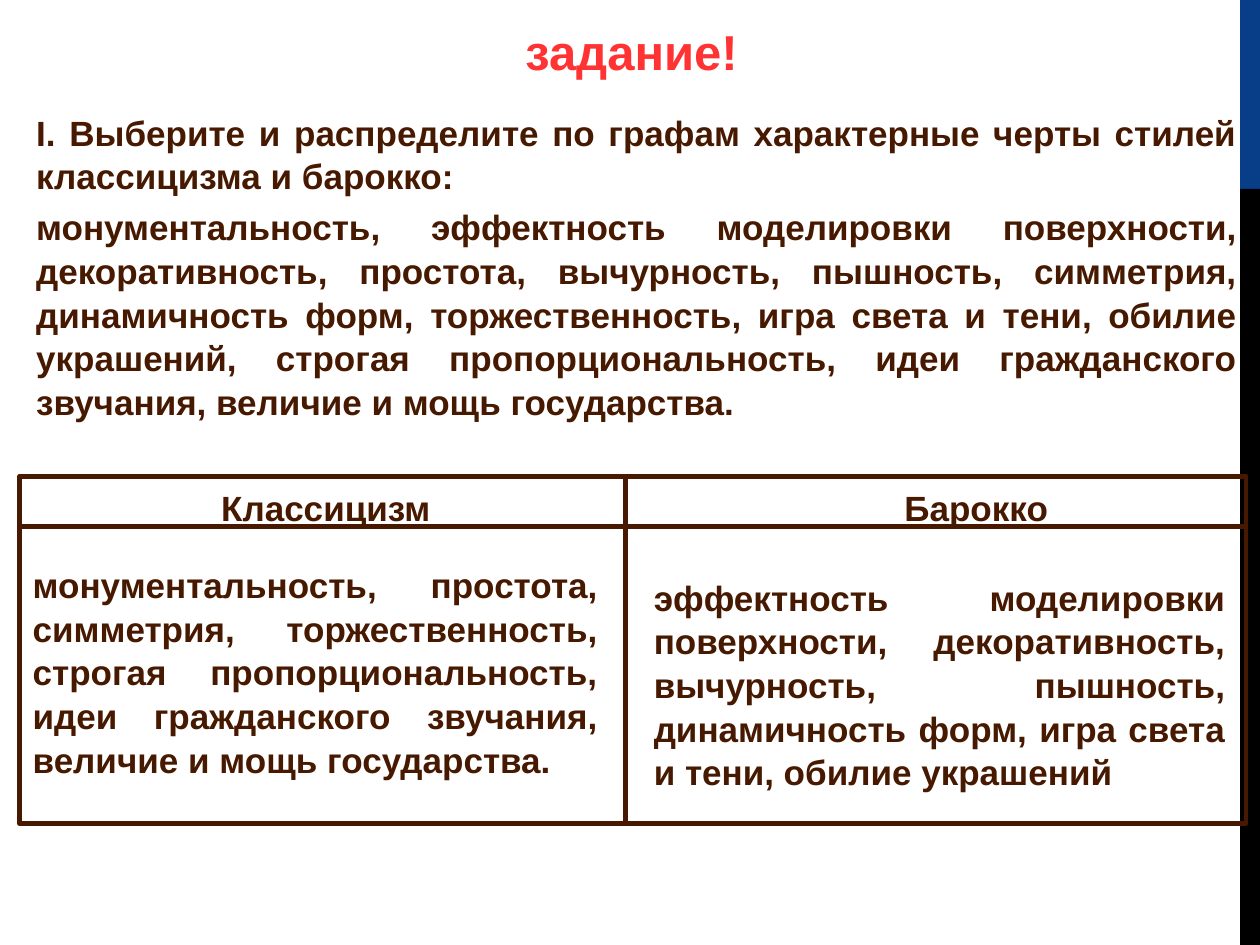
from dataclasses import dataclass

from lxml import etree
from pptx import Presentation
from pptx.dml.color import RGBColor
from pptx.enum.shapes import MSO_CONNECTOR, MSO_SHAPE
from pptx.enum.text import MSO_ANCHOR, PP_ALIGN
from pptx.oxml.ns import qn
from pptx.util import Cm, Pt

RECTANGLE = MSO_SHAPE.RECTANGLE
STRAIGHT = MSO_CONNECTOR.STRAIGHT
LEFT, CENTER, JUSTIFY = PP_ALIGN.LEFT, PP_ALIGN.CENTER, PP_ALIGN.JUSTIFY
TOP, MIDDLE = MSO_ANCHOR.TOP, MSO_ANCHOR.MIDDLE

BROWN, RED, BLUE, BLACK = "461900", "FF3333", "073E87", "000000"
FONT = "Arial"
LINE_WIDTH = Pt(2.83)
WIDE_INSETS = (0.3, 0.18)


@dataclass
class Box:
    left: float
    top: float
    width: float
    height: float

    def lengths(self) -> tuple:
        return Cm(self.left), Cm(self.top), Cm(self.width), Cm(self.height)


@dataclass
class TextBlock:
    box: Box
    paragraphs: list[str]
    insets: tuple[float, float] = (0.25, 0.13)


def color(value: str) -> RGBColor:
    return RGBColor.from_string(value)


def format_text(shape, alignment, size: float, text_color: str, insets=(0.25, 0.13), anchor=TOP) -> None:
    frame = shape.text_frame
    frame.word_wrap = True
    frame.vertical_anchor = anchor
    frame.margin_left = frame.margin_right = Cm(insets[0])
    frame.margin_top = frame.margin_bottom = Cm(insets[1])
    for paragraph in frame.paragraphs:
        paragraph.alignment = alignment
        paragraph.line_spacing = 1.04
        paragraph.space_after = Pt(4.2)
        for run in paragraph.runs:
            run.font.name = FONT
            run.font.size = Pt(size)
            run.font.bold = True
            run.font.color.rgb = color(text_color)


def add_bar(slide, box: Box, fill: str) -> None:
    bar = slide.shapes.add_shape(RECTANGLE, *box.lengths())
    bar.shadow.inherit = False
    bar.fill.solid()
    bar.fill.fore_color.rgb = color(fill)
    bar.line.fill.background()


def add_text(slide, block: TextBlock) -> None:
    shape = slide.shapes.add_textbox(*block.box.lengths())
    shape.text_frame.text = "\n".join(block.paragraphs)
    format_text(shape, JUSTIFY, 20, BROWN, block.insets)


def add_frame(slide, box: Box, headings: dict[str, float]) -> None:
    """Draw the outline; each heading is centred on its tab stop."""
    shape = slide.shapes.add_shape(RECTANGLE, *box.lengths())
    shape.shadow.inherit = False
    shape.fill.background()
    shape.line.color.rgb = color(BROWN)
    shape.line.width = LINE_WIDTH
    paragraph = shape.text_frame.paragraphs[0]
    paragraph.text = "".join(f"\t{heading}" for heading in headings)
    format_text(shape, LEFT, 20, BROWN, WIDE_INSETS)
    tabs = etree.SubElement(paragraph._p.get_or_add_pPr(), qn("a:tabLst"))
    for position in headings.values():
        etree.SubElement(tabs, qn("a:tab"), pos=str(Cm(position)), algn="ctr")


def add_rule(slide, start: tuple[float, float], end: tuple[float, float]) -> None:
    points = [Cm(value) for value in (*start, *end)]
    rule = slide.shapes.add_connector(STRAIGHT, *points)
    rule.line.color.rgb = color(BROWN)
    rule.line.width = LINE_WIDTH
    etree.SubElement(rule._element.spPr, qn("a:effectLst"))


TASK = TextBlock(Box(0.48, 2.08, 24.71, 6.32), [
    "I. Выберите и распределите по графам характерные черты стилей классицизма и барокко:",
    "монументальность, эффектность моделировки поверхности, декоративность, простота, "
    "вычурность, пышность, симметрия, динамичность форм, торжественность, игра света и тени, "
    "обилие украшений, строгая пропорциональность, идеи гражданского звучания, "
    "величие и мощь государства.",
])
ANSWERS = [
    TextBlock(Box(0.41, 11.2, 11.89, 4.5), [
        "монументальность, простота, симметрия, торжественность, строгая пропорциональность, "
        "идеи гражданского звучания, величие и мощь государства.",
    ]),
    TextBlock(Box(12.88, 11.4, 12.12, 4.6), [
        "эффектность моделировки поверхности, декоративность, вычурность, пышность, "
        "динамичность форм, игра света и тени, обилие украшений",
    ], WIDE_INSETS),
]
FRAME = Box(0.4, 9.6, 24.72, 7)
HEADINGS = {"Классицизм": 5.87, "Барокко": 18.98}


def main() -> None:
    presentation = Presentation()
    presentation.slide_width, presentation.slide_height = Cm(25.4), Cm(19.05)
    slide = presentation.slides.add_slide(presentation.slide_layouts[5])

    # Side bars
    add_bar(slide, Box(25, 0, 0.4, 3.81), BLUE)
    add_bar(slide, Box(25, 3.81, 0.4, 15.24), BLACK)

    # Title and task
    title = slide.shapes.title
    title.left, title.top, title.width, title.height = Box(2.8, 0.2, 19.86, 1.6).lengths()
    title.text_frame.text = "задание!"
    format_text(title, CENTER, 28, RED, anchor=MIDDLE)
    title.text_frame.paragraphs[0].space_after = Pt(0)
    add_text(slide, TASK)

    # Two-column frame with its rules
    add_frame(slide, FRAME, HEADINGS)
    right, bottom = FRAME.left + FRAME.width, FRAME.top + FRAME.height
    add_rule(slide, (FRAME.left, 10.62), (right, 10.62))
    add_rule(slide, (12.6, FRAME.top), (12.6, bottom))

    # Answers
    for answer in ANSWERS:
        add_text(slide, answer)

    presentation.save("out.pptx")


if __name__ == "__main__":
    main()
